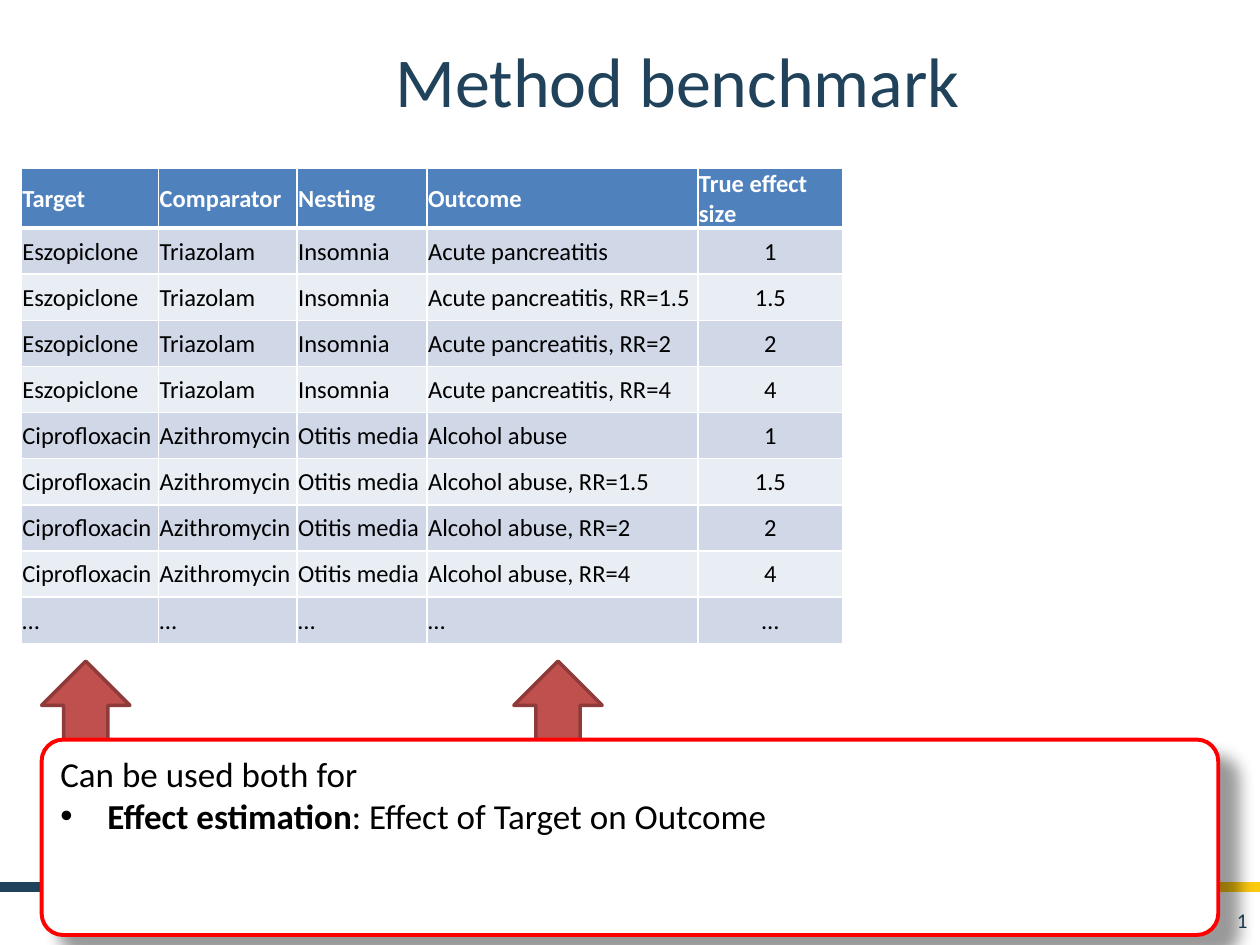
import pptx
import pptx.dml.color
import pptx.enum.shapes
import pptx.enum.text
import pptx.oxml
import pptx.oxml.ns
import pptx.util
from dataclasses import dataclass
from lxml import etree
from pptx.dml.color import RGBColor
from pptx.util import Cm

NAVY = RGBColor(0x20, 0x42, 0x5A)
ORANGE = RGBColor(0xEB, 0x66, 0x22)
YELLOW = RGBColor(0xFC, 0xCB, 0x10)
BLACK = RGBColor(0x00, 0x00, 0x00)
WHITE = RGBColor(0xFF, 0xFF, 0xFF)
RED = RGBColor(0xFF, 0x00, 0x00)
BRICK = RGBColor(0xC0, 0x50, 0x4D)
DARK_BRICK = RGBColor(0x8E, 0x3B, 0x39)
HEADER_BLUE = RGBColor(0x4F, 0x81, 0xBD)
BANDS = (RGBColor(0xD0, 0xD8, 0xE8), RGBColor(0xE9, 0xED, 0xF4))

FONT = "Calibri"
NAMESPACE = pptx.oxml.ns.nsdecls("a")
SHAPES = pptx.enum.shapes.MSO_SHAPE
ALIGN = pptx.enum.text.PP_ALIGN
ANCHOR = pptx.enum.text.MSO_ANCHOR


@dataclass(frozen=True)
class Area:
    left: float
    top: float
    width: float
    height: float

    def lengths(self) -> tuple:
        return Cm(self.left), Cm(self.top), Cm(self.width), Cm(self.height)


@dataclass(frozen=True)
class Study:
    target: str
    comparator: str
    nesting: str
    outcome: str


HEADERS = ("Target", "Comparator", "Nesting", "Outcome", "True effect size")
COLUMN_WIDTHS = (2.77, 2.79, 2.62, 5.46, 2.92)
EFFECT_SIZES = ("1", "1.5", "2", "4")
STUDIES = (
    Study("Eszopiclone", "Triazolam", "Insomnia", "Acute pancreatitis"),
    Study("Ciprofloxacin", "Azithromycin", "Otitis media", "Alcohol abuse"),
)
ARROWS = (Area(0.84, 13.33, 1.78, 1.83), Area(10.36, 13.33, 1.78, 1.83))


def style_font(font, size: float, color: RGBColor, bold: bool = False) -> None:
    font.name = FONT
    font.size = pptx.util.Pt(size)
    font.bold = bold
    font.color.rgb = color


def add_shape(page, kind, area: Area, fill: RGBColor, line: RGBColor, weight: float):
    shape = page.shapes.add_shape(kind, *area.lengths())
    shape.shadow.inherit = False
    shape.fill.solid()
    shape.fill.fore_color.rgb = fill
    shape.line.color.rgb = line
    shape.line.width = pptx.util.Pt(weight)
    return shape


def add_title(page) -> None:
    title = page.shapes.title
    title.left, title.top, title.width, title.height = Area(3.18, 0.43, 20.96, 2.34).lengths()
    title.text_frame.text = "Method benchmark"
    title.text_frame.vertical_anchor = ANCHOR.MIDDLE
    para = title.text_frame.paragraphs[0]
    para.alignment = ALIGN.CENTER
    style_font(para.runs[0].font, 40, NAVY)


def add_footer_bar(page) -> None:
    bar = page.shapes.add_shape(SHAPES.RECTANGLE, *Area(0, 17.78, 25.4, 0.2).lengths())
    bar.shadow.inherit = False
    bar.line.fill.background()
    bar.fill.gradient()
    bar.fill.gradient_angle = 0
    stops = bar.fill._fill._gradFill.find(pptx.oxml.ns.qn("a:gsLst"))
    for stop in list(stops):
        stops.remove(stop)
    for percent, color in ((44, NAVY), (55, ORANGE), (100, YELLOW)):
        stops.append(pptx.oxml.parse_xml(
            f'<a:gs {NAMESPACE} pos="{percent * 1000}"><a:srgbClr val="{color}"/></a:gs>'))


def add_page_number(page) -> None:
    box = page.shapes.add_textbox(*Area(19.48, 18.03, 5.92, 1.02).lengths())
    box.text_frame.word_wrap = True
    box.text_frame.vertical_anchor = ANCHOR.MIDDLE
    para = box.text_frame.paragraphs[0]
    para.alignment = ALIGN.RIGHT
    para._p.append(pptx.oxml.parse_xml(
        f'<a:fld {NAMESPACE} id="{{B6F15528-21DE-4FAA-801E-634DDDAF4B2B}}" type="slidenum">'
        f'<a:rPr lang="en-US" sz="1200"><a:solidFill><a:srgbClr val="{NAVY}"/></a:solidFill>'
        f'<a:latin typeface="{FONT}"/></a:rPr><a:t>4</a:t></a:fld>'))


def benchmark_rows() -> list:
    rows = [HEADERS]
    for study in STUDIES:
        for size in EFFECT_SIZES:
            suffix = "" if size == "1" else f", RR={size}"
            rows.append((study.target, study.comparator, study.nesting,
                         study.outcome + suffix, size))
    rows.append(("…",) * len(HEADERS))
    return rows


def set_borders(cell, top: float, bottom: float) -> None:
    properties = cell._tc.get_or_add_tcPr()
    weights = (("lnL", 1), ("lnR", 1), ("lnT", top), ("lnB", bottom))
    for position, (side, weight) in enumerate(weights):
        properties.insert(position, pptx.oxml.parse_xml(
            f'<a:{side} {NAMESPACE} w="{pptx.util.Pt(weight)}"><a:solidFill>'
            f'<a:srgbClr val="{WHITE}"/></a:solidFill></a:{side}>'))


def fill_cell(cell, text: str, row: int, centred: bool) -> None:
    header = row == 0
    cell.text_frame.text = text
    cell.vertical_anchor = ANCHOR.MIDDLE
    cell.margin_left = cell.margin_right = cell.margin_top = Cm(0.02)
    cell.margin_bottom = 0
    cell.fill.solid()
    cell.fill.fore_color.rgb = HEADER_BLUE if header else BANDS[(row - 1) % 2]
    set_borders(cell, 3 if row == 1 else 1, 3 if header else 1)
    para = cell.text_frame.paragraphs[0]
    para.alignment = ALIGN.CENTER if centred else ALIGN.LEFT
    style_font(para.runs[0].font, 14, WHITE if header else BLACK, header)


def add_benchmark_table(page) -> None:
    rows = benchmark_rows()
    area = Area(0.43, 3.39, sum(COLUMN_WIDTHS), 9.6)
    table = page.shapes.add_table(len(rows), len(HEADERS), *area.lengths()).table
    for column, width in zip(table.columns, COLUMN_WIDTHS):
        column.width = Cm(width)
    for row, texts in enumerate(rows):
        table.rows[row].height = Cm(0.93 if row else 1.17)
        for column, text in enumerate(texts):
            centred = row > 0 and column == len(HEADERS) - 1
            fill_cell(table.cell(row, column), text, row, centred)


def add_usage_box(page) -> None:
    box = add_shape(page, SHAPES.ROUNDED_RECTANGLE, Area(0.84, 14.91, 23.72, 3.94),
                    WHITE, RED, 2.25)
    box.adjustments[0] = 0.11
    effects = box._element.spPr.find(pptx.oxml.ns.qn("a:effectLst"))
    shadow = etree.SubElement(effects, pptx.oxml.ns.qn("a:outerShdw"),
                              blurRad=str(pptx.util.Pt(9)), dist=str(pptx.util.Pt(14)),
                              dir="2700000", algn="tl", rotWithShape="0")
    color = etree.SubElement(shadow, pptx.oxml.ns.qn("a:srgbClr"), val=str(BLACK))
    etree.SubElement(color, pptx.oxml.ns.qn("a:alpha"), val="40000")

    frame = box.text_frame
    frame.word_wrap = True
    frame.vertical_anchor = ANCHOR.TOP
    frame.text = "Can be used both for"
    intro = frame.paragraphs[0]
    bullet = frame.add_paragraph()
    properties = bullet._p.get_or_add_pPr()
    properties.set("marL", str(Cm(0.95)))
    properties.set("indent", str(-Cm(0.95)))
    etree.SubElement(properties, pptx.oxml.ns.qn("a:buFont"), typeface="Arial")
    etree.SubElement(properties, pptx.oxml.ns.qn("a:buChar"), char="•")
    for text in ("Effect estimation", ": Effect of Target on Outcome"):
        bullet.add_run().text = text
    for para in (intro, bullet):
        para.alignment = ALIGN.LEFT
        for span in para.runs:
            style_font(span.font, 20, BLACK, span.text == "Effect estimation")


def main() -> None:
    deck = pptx.Presentation()
    deck.slide_width, deck.slide_height = Cm(25.4), Cm(19.05)
    page = deck.slides.add_slide(deck.slide_layouts[5])
    add_footer_bar(page)
    add_title(page)
    add_page_number(page)
    for arrow in ARROWS:
        add_shape(page, SHAPES.UP_ARROW, arrow, BRICK, DARK_BRICK, 2)
    add_usage_box(page)
    add_benchmark_table(page)
    deck.save("out.pptx")


if __name__ == "__main__":
    main()
